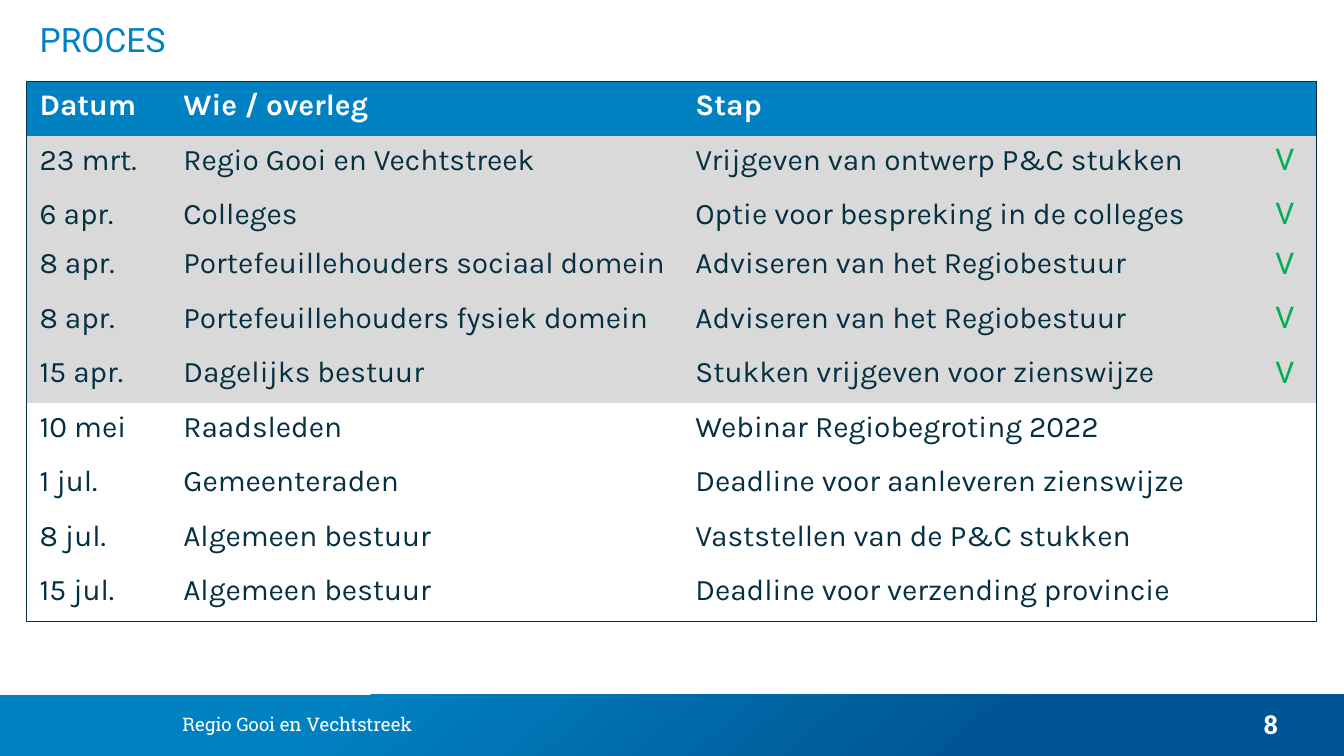
from typing import NamedTuple

from lxml.etree import SubElement
from pptx import Presentation
from pptx.dml.color import RGBColor
from pptx.enum.shapes import MSO_SHAPE
from pptx.enum.text import MSO_ANCHOR, PP_ALIGN
from pptx.oxml.ns import qn
from pptx.util import Inches, Pt

SLIDE_W = Inches(10)
SLIDE_H = SLIDE_W * 9 // 16
BLUE, DEEP_BLUE, INK = "0082C2", "005493", "052F42"
GREY, WHITE, GREEN = "D9D9D9", "FFFFFF", "00B050"
PLAIN_STYLE = "{2D5ABB26-0587-4C30-8999-92F81FD0307C}"
COLUMN_WIDTHS = (1.07, 3.81, 4.25, 0.47)
TABLE_HEIGHT, SHORT_ROW_HEIGHT, SHORT_ROW = 4.01, 0.36, 2


class Area(NamedTuple):
    """Left, top, width and height as percentages of the slide."""
    left: float
    top: float
    width: float
    height: float

    def emu(self) -> tuple:
        return (int(SLIDE_W * self.left / 100), int(SLIDE_H * self.top / 100),
                int(SLIDE_W * self.width / 100), int(SLIDE_H * self.height / 100))


class TextStyle(NamedTuple):
    font: str
    size: int
    color: str
    bold: bool = False
    align: PP_ALIGN = PP_ALIGN.LEFT


class Step(NamedTuple):
    date: str
    body: str
    action: str
    done: bool = False


TITLE = TextStyle("Roboto", 18, BLUE)
HEADER = TextStyle("Karla", 16, WHITE, bold=True)
ENTRY = TextStyle("Karla", 16, INK)
CHECK = TextStyle("Roboto", 16, GREEN, align=PP_ALIGN.CENTER)
FOOTER = TextStyle("Roboto Slab", 10, WHITE)
PAGE_NUMBER = TextStyle("Roboto Slab", 14, WHITE, True, PP_ALIGN.CENTER)

STEPS = (
    Step("23 mrt.", "Regio Gooi en Vechtstreek", "Vrijgeven van ontwerp P&C stukken", True),
    Step("6 apr.", "Colleges", "Optie voor bespreking in de colleges", True),
    Step("8 apr.", "Portefeuillehouders sociaal domein", "Adviseren van het Regiobestuur", True),
    Step("8 apr.", "Portefeuillehouders fysiek domein", "Adviseren van het Regiobestuur", True),
    Step("15 apr.", "Dagelijks bestuur", "Stukken vrijgeven voor zienswijze", True),
    Step("10 mei", "Raadsleden", "Webinar Regiobegroting 2022"),
    Step("1 jul.", "Gemeenteraden", "Deadline voor aanleveren zienswijze"),
    Step("8 jul.", "Algemeen bestuur", "Vaststellen van de P&C stukken"),
    Step("15 jul.", "Algemeen bestuur", "Deadline voor verzending provincie"),
)


def rgb(color: str) -> RGBColor:
    return RGBColor.from_string(color)


def write(frame, text: str, style: TextStyle) -> None:
    frame.text = text
    frame.word_wrap = True
    paragraph = frame.paragraphs[0]
    paragraph.alignment = style.align
    for run in paragraph.runs:
        run.font.name = style.font
        run.font.size = Pt(style.size)
        run.font.bold = style.bold
        run.font.color.rgb = rgb(style.color)


def add_label(slide, area: Area, text: str, style: TextStyle) -> None:
    write(slide.shapes.add_textbox(*area.emu()).text_frame, text, style)


def add_title(slide, area: Area, text: str) -> None:
    title = slide.shapes.title
    title.left, title.top, title.width, title.height = area.emu()
    title.text_frame.vertical_anchor = MSO_ANCHOR.TOP
    write(title.text_frame, text, TITLE)


def add_footer_band(slide, area: Area) -> None:
    band = slide.shapes.add_shape(MSO_SHAPE.RECTANGLE, *area.emu())
    band.shadow.inherit = False
    band.line.fill.background()
    band.fill.gradient()
    band.fill.gradient_angle = 310
    for stop, (position, color) in zip(band.fill.gradient_stops,
                                       ((0.24, BLUE), (0.75, DEEP_BLUE))):
        stop.position = position
        stop.color.rgb = rgb(color)


def outline_cell(cell, sides: str) -> None:
    """Draw a hairline on the given sides, in the order L, R, T, B."""
    properties = cell._tc.get_or_add_tcPr()
    for side in sides:
        border = SubElement(properties, qn(f"a:ln{side}"), w=str(Pt(0.25)))
        paint = SubElement(border, qn("a:solidFill"))
        SubElement(paint, qn("a:srgbClr"), val=INK)


def add_schedule(slide, area: Area, steps: tuple) -> None:
    last_row, last_column = len(steps), len(COLUMN_WIDTHS) - 1
    schedule = slide.shapes.add_table(last_row + 1, last_column + 1, *area.emu()).table
    schedule.first_row = schedule.horz_banding = False
    schedule._tbl.tblPr.find(qn("a:tableStyleId")).text = PLAIN_STYLE

    # Column and row sizes
    for column, width in zip(schedule.columns, COLUMN_WIDTHS):
        column.width = Inches(width)
    regular_height = (TABLE_HEIGHT - SHORT_ROW_HEIGHT) / last_row
    for index, row in enumerate(schedule.rows):
        row.height = Inches(SHORT_ROW_HEIGHT if index == SHORT_ROW else regular_height)

    # Wording, fills and outer border
    lines = [(("Datum", "Wie / overleg", "Stap", ""), HEADER, BLUE)]
    lines += [((step.date, step.body, step.action, "V" if step.done else ""),
               ENTRY, GREY if step.done else WHITE) for step in steps]
    for r, (texts, style, fill) in enumerate(lines):
        for c, text in enumerate(texts):
            cell = schedule.cell(r, c)
            write(cell.text_frame, text, CHECK if c == last_column else style)
            at_right = c == last_column or (r == 0 and c == last_column - 1)
            edges = (("L", c == 0), ("R", at_right), ("T", r == 0), ("B", r == last_row))
            outline_cell(cell, "".join(side for side, on_edge in edges if on_edge))
            cell.fill.solid()
            cell.fill.fore_color.rgb = rgb(fill)
    schedule.cell(0, last_column - 1).merge(schedule.cell(0, last_column))


def main() -> None:
    presentation = Presentation()
    presentation.slide_width, presentation.slide_height = SLIDE_W, SLIDE_H
    slide = presentation.slides.add_slide(presentation.slide_layouts[5])

    # Footer
    add_footer_band(slide, Area(0, 91.93, 100, 8.07))
    add_label(slide, Area(90.2, 92.8, 8.7, 6.2), "8", PAGE_NUMBER)
    add_label(slide, Area(12.6, 93.4, 30.7, 6.2), "Regio Gooi en Vechtstreek", FOOTER)

    # Title and schedule
    add_title(slide, Area(1.95, 1.6, 85.8, 10.5), "PROCES")
    add_schedule(slide, Area(1.95, 10.8, 96, 71.3), STEPS)

    presentation.save("out.pptx")


if __name__ == "__main__":
    main()
